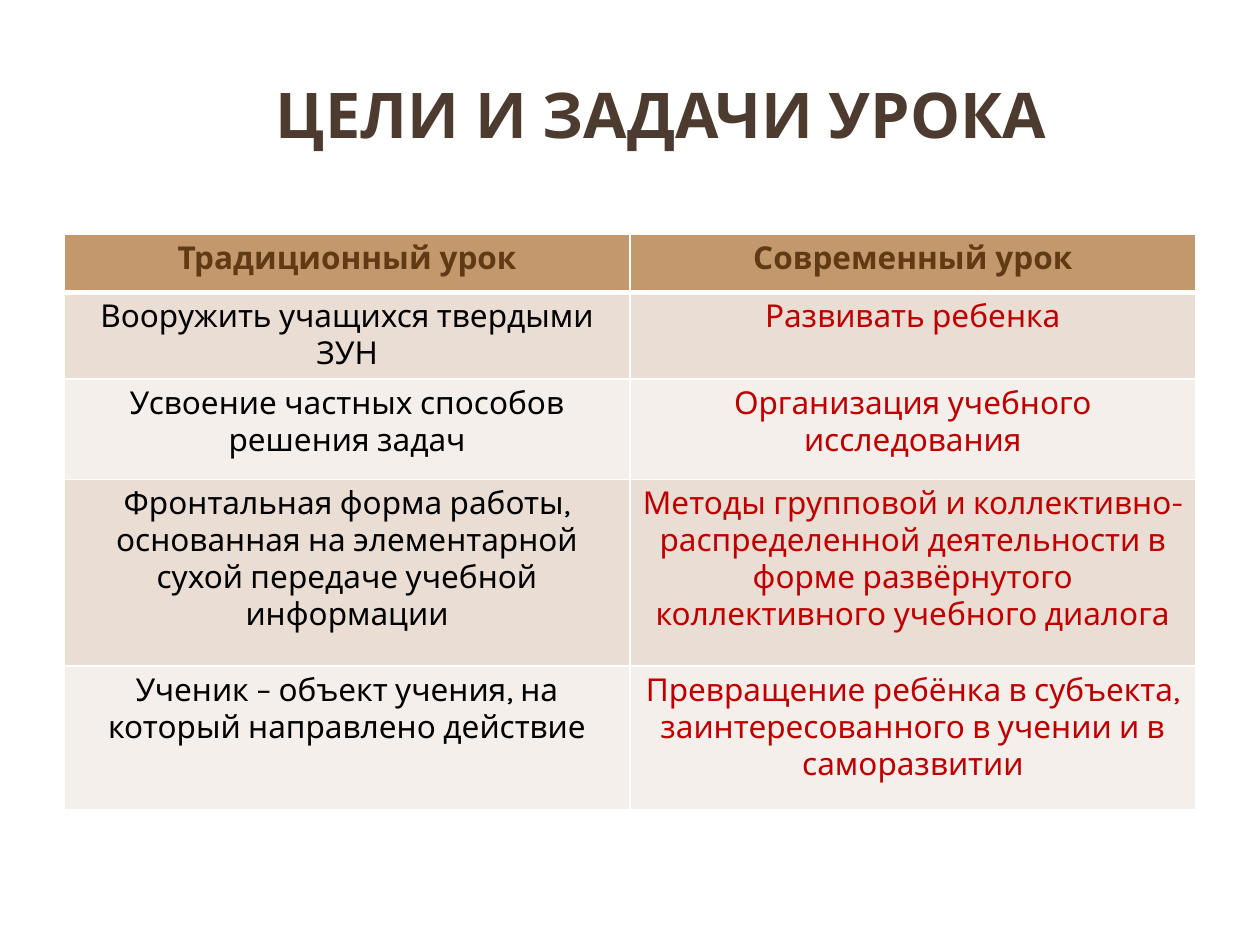
"""Build a slide comparing the goals of a traditional and a modern lesson."""
import pptx
import pptx.dml.color
import pptx.enum.text
import pptx.oxml
import pptx.oxml.ns
import pptx.util

Pt = pptx.util.Pt
ALIGN = pptx.enum.text.PP_ALIGN
FONT = "Karla"
HEADS = ("Традиционный урок", "Современный урок")
GOALS = (
    ("Вооружить учащихся твердыми ЗУН", "Развивать ребенка"),
    ("Усвоение частных способов решения задач",
     "Организация учебного исследования"),
    ("Фронтальная форма работы, основанная на элементарной сухой передаче "
     "учебной информации",
     "Методы групповой и коллективно-распределенной деятельности в форме "
     "развёрнутого коллективного учебного диалога"),
    ("Ученик – объект учения, на который направлено действие",
     "Превращение ребёнка в субъекта, заинтересованного в учении и в "
     "саморазвитии"),
)
HEIGHTS = (33, 33, 57.6, 106.5, 82)
INKS = ("000000", "C00000")
BANDS = ("E9DDD4", "F5EFEB")


def color(code):
    """Turn a hex string into a colour."""
    return pptx.dml.color.RGBColor.from_string(code)


def write(frame, text, size=18, ink="000000", bold=False, align=ALIGN.CENTER):
    """Put formatted text into a frame."""
    para = frame.paragraphs[0]
    para.alignment = align
    run = para.add_run()
    run.text = text
    run.font.name = FONT
    run.font.size = Pt(size)
    run.font.bold = bold
    run.font.color.rgb = color(ink)


def border(cell, base=1):
    """Draw white edges around a cell, with its own width at the bottom."""
    props = cell._tc.get_or_add_tcPr()
    sides = {"lnL": 1, "lnR": 1, "lnT": 1, "lnB": base}
    for spot, (side, width) in enumerate(sides.items()):
        edge = pptx.oxml.parse_xml(
            f'<a:{side} {pptx.oxml.ns.nsdecls("a")} w="{Pt(width)}">'
            '<a:solidFill><a:srgbClr val="FFFFFF"/></a:solidFill>'
            f'</a:{side}>')
        props.insert(spot, edge)


def fill(cell, text, back, base=1, **style):
    """Give a cell its text, background and edges."""
    write(cell.text_frame, text, **style)
    cell.fill.solid()
    cell.fill.fore_color.rgb = color(back)
    border(cell, base)


def head(slide, text):
    """Place and format the slide title."""
    title = slide.shapes.title
    title.left, title.top = Pt(150.5), Pt(36)
    title.width, title.height = Pt(461), Pt(66)
    frame = title.text_frame
    frame.word_wrap = True
    frame.auto_size = pptx.enum.text.MSO_AUTO_SIZE.NONE
    frame.vertical_anchor = pptx.enum.text.MSO_ANCHOR.TOP
    frame.margin_left = frame.margin_right = Pt(7.2)
    frame.margin_top = frame.margin_bottom = Pt(7.2)
    write(frame, text, size=36, ink="4E3B30", bold=True, align=ALIGN.LEFT)


def grid(slide):
    """Add the table of goals."""
    table = slide.shapes.add_table(
        len(HEIGHTS), len(HEADS), Pt(36.7), Pt(134), Pt(646.6),
        Pt(sum(HEIGHTS))).table
    for row, height in zip(table.rows, HEIGHTS):
        row.height = Pt(height)
    for col, text in enumerate(HEADS):
        fill(table.cell(0, col), text, "C3986D", base=3, ink="603A14",
             bold=True)
    for row, pair in enumerate(GOALS):
        for col, text in enumerate(pair):
            fill(table.cell(row + 1, col), text, BANDS[row % 2],
                 ink=INKS[col])


def main():
    """Build and save the slide."""
    deck = pptx.Presentation()
    deck.slide_width, deck.slide_height = Pt(720), Pt(540)
    slide = deck.slides.add_slide(deck.slide_layouts[5])
    head(slide, "ЦЕЛИ И ЗАДАЧИ УРОКА")
    grid(slide)
    deck.save("out.pptx")


if __name__ == "__main__":
    main()
